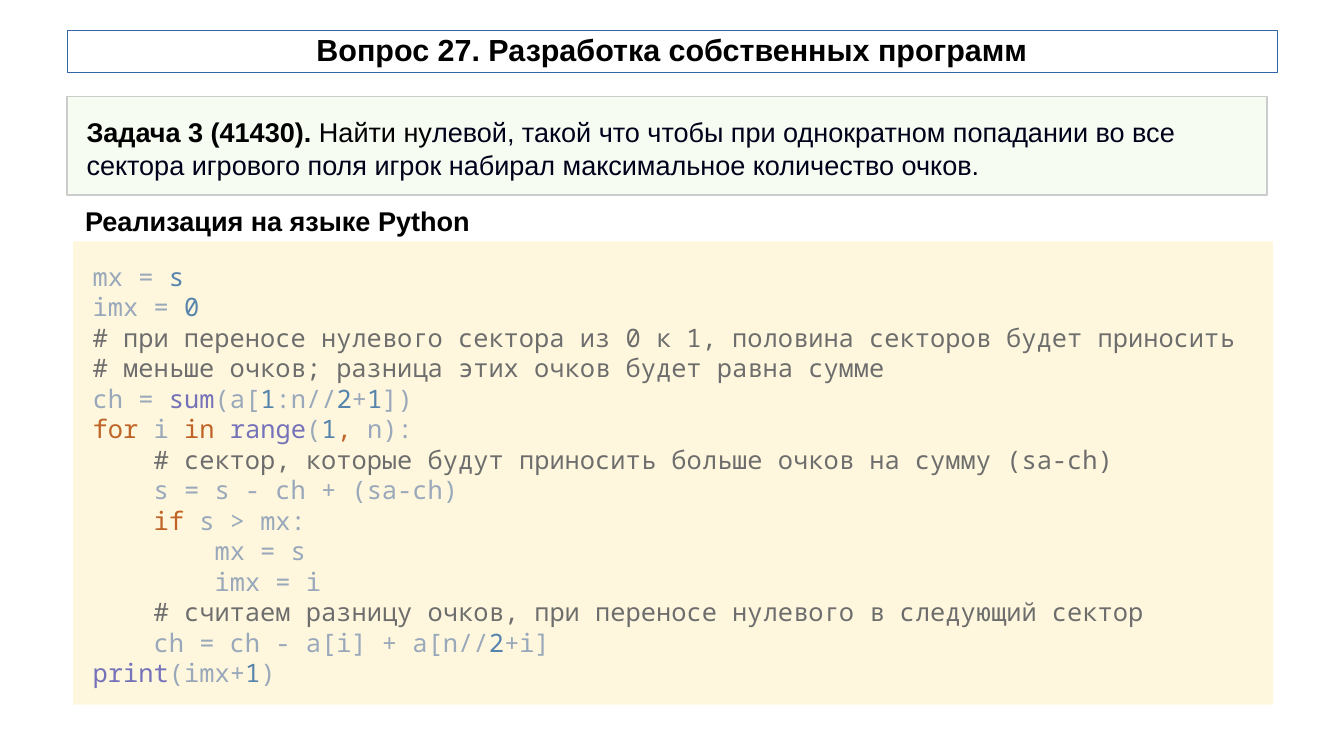
from pptx import Presentation
from pptx.dml.color import RGBColor
from pptx.enum.shapes import MSO_SHAPE
from pptx.enum.text import MSO_ANCHOR, MSO_AUTO_SIZE, PP_ALIGN
from pptx.util import Inches, Pt

RECT = MSO_SHAPE.RECTANGLE
TOP, MIDDLE = MSO_ANCHOR.TOP, MSO_ANCHOR.MIDDLE
LEFT, CENTER = PP_ALIGN.LEFT, PP_ALIGN.CENTER
FIXED = MSO_AUTO_SIZE.NONE
SANS, MONO = "Arial", "Noto Sans Mono"
BLACK, NAVY = "000000", "00001A"
PLAIN, NUM, NOTE, FUNC, WORD = "99A8BA", "5684AD", "6D6D6D", "7572B9", "BF6426"
INDENT = 0.5

CODE = [
    (0, [("mx = ", PLAIN), ("s", NUM)]),
    (0, [("imx = ", PLAIN), ("0", NUM)]),
    (0, [("# при переносе нулевого сектора из 0 к 1, половина секторов будет приносить ", NOTE),
         ("\n", NOTE),
         ("# меньше очков; разница этих очков будет равна сумме", NOTE)]),
    (0, [("ch = ", PLAIN), ("sum", FUNC), ("(a[", PLAIN), ("1", NUM), (":n//", PLAIN),
         ("2", NUM), ("+", PLAIN), ("1", NUM), ("])", PLAIN)]),
    (0, [("for ", WORD), ("i ", PLAIN), ("in ", WORD), ("range", FUNC), ("(", PLAIN),
         ("1", NUM), (", ", WORD), ("n):", PLAIN)]),
    (1, [("# сектор, которые будут приносить больше очков на сумму (sa-ch)", NOTE)]),
    (1, [("s = s - ch + (sa-ch)", PLAIN)]),
    (1, [("if ", WORD), ("s > mx:", PLAIN)]),
    (2, [("mx = s", PLAIN)]),
    (2, [("imx = i", PLAIN)]),
    (1, [("# считаем разницу очков, при переносе нулевого в следующий сектор", NOTE)]),
    (1, [("ch = ch - a[i] + a[n//", PLAIN), ("2", NUM), ("+i]", PLAIN)]),
    (0, [("print", FUNC), ("(imx+", PLAIN), ("1", NUM), (")", PLAIN)]),
]


def color(code):
    return RGBColor.from_string(code)


def apply(target, values):
    for name, value in values.items():
        setattr(target, name, value)


def place(shape, box):
    names = ("left", "top", "width", "height")
    apply(shape, dict(zip(names, map(Inches, box))))


def frame(shape, side, edge, anchor=TOP):
    text = shape.text_frame
    apply(text, {
        "margin_left": Inches(side), "margin_right": Inches(side),
        "margin_top": Inches(edge), "margin_bottom": Inches(edge),
        "word_wrap": True, "auto_size": FIXED, "vertical_anchor": anchor,
    })
    return text


def write(para, text, tint, **style):
    run = para.add_run()
    run.text = text
    apply(run.font, style)
    run.font.color.rgb = color(tint)


def panel(slide, box, fill):
    shape = slide.shapes.add_shape(RECT, *map(Inches, box))
    shape.shadow.inherit = False
    shape.fill.solid()
    shape.fill.fore_color.rgb = color(fill)
    return shape


def listing(slide, box):
    shape = panel(slide, box, "FEF7DD")
    shape.line.fill.background()
    text = frame(shape, 0.16, 0.16)
    for index, (level, parts) in enumerate(CODE):
        para = text.add_paragraph() if index else text.paragraphs[0]
        para.alignment = LEFT
        props = para._p.get_or_add_pPr()
        props.set("marL", str(Inches(level * INDENT)))
        props.set("indent", "0")
        for part, tint in parts:
            if part == "\n":
                para.add_line_break()
            else:
                write(para, part, tint, name=MONO, size=Pt(15))


def caption(slide, box):
    shape = slide.shapes.add_textbox(*map(Inches, box))
    para = frame(shape, 0.1, 0.05).paragraphs[0]
    write(para, "Реализация на языке Python", BLACK, name=SANS, size=Pt(16), bold=True)


def task(slide, box):
    shape = panel(slide, box, "F6FCF2")
    shape.line.color.rgb = color("CCCCCC")
    shape.line.width = Pt(0)
    para = frame(shape, 0.16, 0.16).paragraphs[0]
    apply(para, {"alignment": LEFT, "space_before": Pt(11.9), "space_after": Pt(9.9)})
    style = {"name": SANS, "size": Pt(16)}
    write(para, "Задача 3 (41430).", BLACK, bold=True, **style)
    write(para, " Найти ну", BLACK, bold=False, **style)
    write(para, "левой, такой что чтобы при однократном попадании во все сектора "
          "игрового поля игрок набирал максимальное количество очков.",
          NAVY, bold=False, **style)


def heading(slide, box):
    title = slide.shapes.title
    place(title, box)
    title.line.color.rgb = color("3465A4")
    title.line.width = Pt(0.28)
    para = frame(title, 0.04, 0, MIDDLE).paragraphs[0]
    apply(para, {"alignment": CENTER, "line_spacing": 0.9})
    write(para, "Вопрос 27. Разработка собственных программ", BLACK,
          name=SANS, size=Pt(18), bold=True)


def main():
    deck = Presentation()
    apply(deck, {"slide_width": Inches(11.02), "slide_height": Inches(6.2)})
    slide = deck.slides.add_slide(deck.slide_layouts[5])
    heading(slide, (0.55, 0.25, 9.92, 0.34))
    task(slide, (0.55, 0.79, 9.84, 0.81))
    listing(slide, (0.6, 1.98, 9.84, 3.8))
    caption(slide, (0.6, 1.63, 3.93, 0.35))
    deck.save("out.pptx")


if __name__ == "__main__":
    main()
